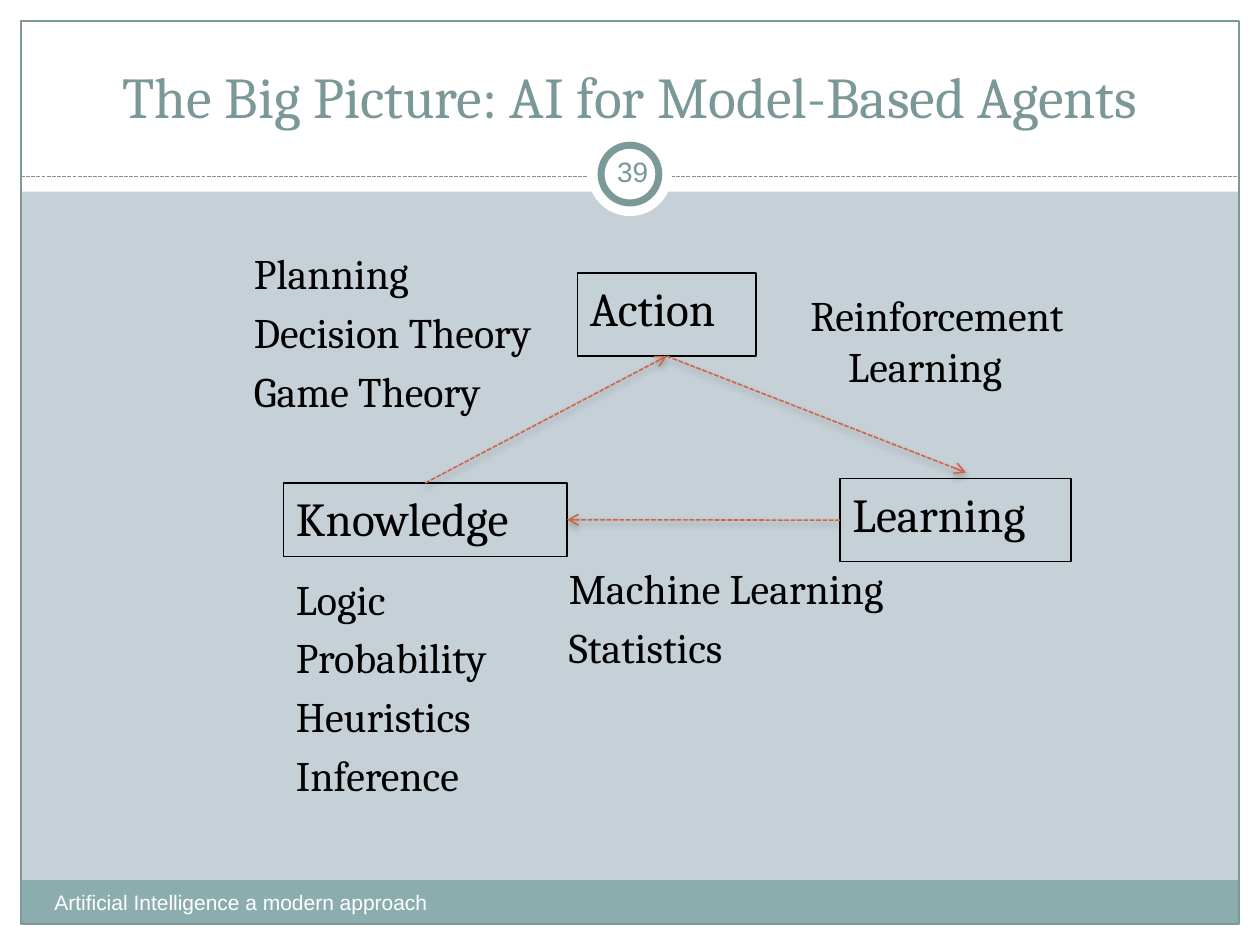
"""Build a slide on how action, learning and knowledge link in model-based agents."""
from dataclasses import dataclass
from typing import Optional

from lxml import etree
from pptx import Presentation
from pptx.dml.color import RGBColor
from pptx.enum.dml import MSO_LINE
from pptx.enum.shapes import MSO_CONNECTOR, MSO_SHAPE
from pptx.enum.text import MSO_ANCHOR, PP_ALIGN
from pptx.oxml import parse_xml
from pptx.oxml.ns import nsdecls, qn
from pptx.shapes.autoshape import Shape
from pptx.shapes.connector import Connector
from pptx.slide import Slide
from pptx.util import Pt

RECT, OVAL = MSO_SHAPE.RECTANGLE, MSO_SHAPE.OVAL
STRAIGHT, DASH = MSO_CONNECTOR.STRAIGHT, MSO_LINE.SQUARE_DOT
TOP, MIDDLE, BOTTOM = MSO_ANCHOR.TOP, MSO_ANCHOR.MIDDLE, MSO_ANCHOR.BOTTOM
LEFT, CENTER = PP_ALIGN.LEFT, PP_ALIGN.CENTER

WIDE, HIGH = 720, 540
EDGE = 12
HANG = 21.6
COLORS = {
    "back": "C5D1D7", "white": "FFFFFF", "black": "000000", "band": "8CADAE",
    "frame": "7C999A", "title": "7B9899", "arrow": "D16349",
}


@dataclass
class Area:
    left: float
    top: float
    width: float
    height: float

    def lengths(self) -> list[Pt]:
        return [Pt(v) for v in (self.left, self.top, self.width, self.height)]


@dataclass
class Panel:
    area: Area
    fill: Optional[str] = None
    line: Optional[str] = None
    weight: float = 0.75
    kind: MSO_SHAPE = RECT


@dataclass
class Label:
    text: str
    area: Area
    size: float
    color: str = "black"
    font: str = "Cambria"
    align: PP_ALIGN = LEFT
    anchor: MSO_ANCHOR = TOP
    inset: Optional[float] = None
    hang: bool = False


@dataclass
class Arrow:
    start: str
    start_side: int
    end: Optional[str] = None
    end_side: int = 0
    tip: tuple[float, float] = (0, 0)


PANELS = [
    Panel(Area(0, HIGH - EDGE, WIDE, EDGE), "white"),
    Panel(Area(0, 0, WIDE, 109.5), "white"),
    Panel(Area(0, 0, EDGE, HIGH), "white"),
    Panel(Area(WIDE - EDGE, 0, EDGE, HIGH), "white"),
    Panel(Area(EDGE, 503, WIDE - 2 * EDGE, 25), "band"),
    Panel(Area(EDGE, EDGE, WIDE - 2 * EDGE, HIGH - 2 * EDGE), line="frame"),
]
BADGE = [
    Panel(Area(336, 75.5, 48, 48), "white", kind=OVAL),
    Panel(Area(343.5, 83, 33, 33), "white", "frame", 4, OVAL),
]
HEADINGS = [
    Label("The Big Picture: AI for Model-Based Agents", Area(24, 18, 672, 60),
          33, "title", align=CENTER, anchor=BOTTOM),
    Label("Artificial Intelligence a modern approach", Area(24, 505, 282, 29),
          12, "white", "Arial"),
    Label("39", Area(343.5, 80.75, 36, 34.5), 16, "title", "Arial", CENTER, MIDDLE, 3.6),
]
NODES = {
    "Action": Area(330, 156, 102, 47.5),
    "Learning": Area(480, 273.5, 132, 47.5),
    "Knowledge": Area(162, 276, 162, 42),
}
TOPICS = {
    "Logic\nProbability\nHeuristics\nInference": Area(162, 324, 138, 144),
    "Planning\nDecision Theory\nGame Theory": Area(138, 138, 204, 144),
    "Reinforcement Learning": Area(456, 162, 204, 84),
    "Machine Learning\nStatistics": Area(318, 318, 234, 102),
}
ARROWS = [
    Arrow("Knowledge", 0, "Action", 2),
    Arrow("Action", 2, tip=(552, 270)),
    Arrow("Learning", 1, "Knowledge", 3),
]


def paint(name: str) -> RGBColor:
    return RGBColor.from_string(COLORS[name])


def draw_panel(slide: Slide, panel: Panel) -> Shape:
    shape = slide.shapes.add_shape(panel.kind, *panel.area.lengths())
    shape.shadow.inherit = False
    if panel.fill:
        shape.fill.solid()
        shape.fill.fore_color.rgb = paint(panel.fill)
    else:
        shape.fill.background()
    if panel.line:
        shape.line.color.rgb = paint(panel.line)
        shape.line.width = Pt(panel.weight)
    else:
        shape.line.fill.background()
    return shape


def write_text(shape: Shape, label: Label) -> None:
    frame = shape.text_frame
    frame.text = label.text
    frame.word_wrap = True
    frame.vertical_anchor = label.anchor
    if label.inset is not None:
        frame.margin_left = frame.margin_right = Pt(label.inset)
        frame.margin_top = frame.margin_bottom = Pt(label.inset)
    for para in frame.paragraphs:
        para.alignment = label.align
        if label.hang:
            props = para._p.get_or_add_pPr()
            props.set("marL", str(Pt(HANG)))
            props.set("indent", str(-Pt(HANG)))
            space = etree.SubElement(props, qn("a:spcBef"))
            etree.SubElement(space, qn("a:spcPct"), val="20000")
        for run in para.runs:
            run.font.name = label.font
            run.font.size = Pt(label.size)
            run.font.color.rgb = paint(label.color)


def draw_label(slide: Slide, label: Label) -> None:
    write_text(slide.shapes.add_textbox(*label.area.lengths()), label)


def draw_node(slide: Slide, name: str, area: Area) -> Shape:
    shape = draw_panel(slide, Panel(area, line="black"))
    write_text(shape, Label(name, area, 27, hang=True))
    return shape


def draw_line(slide: Slide, start: tuple[float, float], end: tuple[float, float],
              color: str, weight: float) -> Connector:
    line = slide.shapes.add_connector(STRAIGHT, *[Pt(v) for v in (*start, *end)])
    line.line.color.rgb = paint(color)
    line.line.width = Pt(weight)
    line.line.dash_style = DASH
    etree.SubElement(line._element.spPr, qn("a:effectLst"))
    return line


def draw_arrow(slide: Slide, arrow: Arrow, nodes: dict[str, Shape]) -> None:
    line = draw_line(slide, (0, 0), arrow.tip, "arrow", 0.9)
    line.begin_connect(nodes[arrow.start], arrow.start_side)
    if arrow.end:
        line.end_connect(nodes[arrow.end], arrow.end_side)
    etree.SubElement(line.line._get_or_add_ln(), qn("a:tailEnd"), type="arrow")
    shadow = parse_xml(
        f'<a:outerShdw {nsdecls("a")} blurRad="{Pt(4)}" dist="{Pt(2)}" dir="5400000" '
        f'rotWithShape="0"><a:srgbClr val="{COLORS["black"]}"><a:alpha val="35000"/>'
        '</a:srgbClr></a:outerShdw>')
    line._element.spPr.find(qn("a:effectLst")).append(shadow)


def main() -> None:
    deck = Presentation()
    deck.slide_width, deck.slide_height = Pt(WIDE), Pt(HIGH)
    slide = deck.slides.add_slide(deck.slide_layouts[6])
    slide.background.fill.solid()
    slide.background.fill.fore_color.rgb = paint("back")
    for panel in PANELS:
        draw_panel(slide, panel)
    draw_line(slide, (EDGE, 100.75), (WIDE - EDGE, 100.75), "frame", 0.75)
    for panel in BADGE:
        draw_panel(slide, panel)
    for label in HEADINGS:
        draw_label(slide, label)
    nodes = {name: draw_node(slide, name, area) for name, area in NODES.items()}
    for arrow in ARROWS:
        draw_arrow(slide, arrow, nodes)
    for text, area in TOPICS.items():
        draw_label(slide, Label(text, area, 24, hang=True))
    deck.save("out.pptx")


if __name__ == "__main__":
    main()
